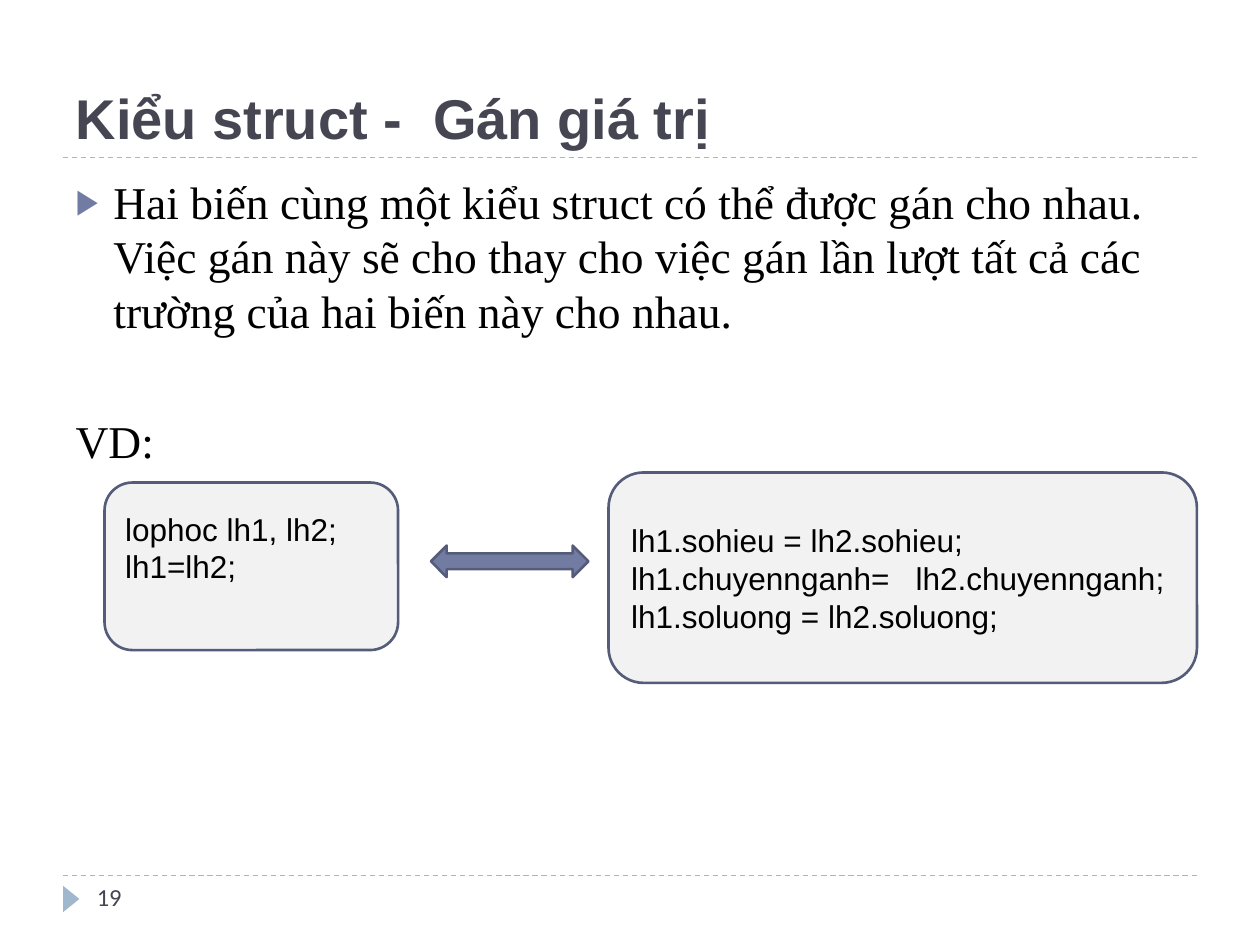
from lxml.etree import SubElement as Sub
from pptx import Presentation
from pptx.dml.color import RGBColor
from pptx.enum.dml import MSO_LINE as Dash
from pptx.enum.shapes import MSO_CONNECTOR as Link, MSO_SHAPE as Kind
from pptx.enum.text import MSO_ANCHOR as Anchor, MSO_AUTO_SIZE as Fit, PP_ALIGN as Align
from pptx.oxml.ns import qn
from pptx.util import Inches, Pt

DARK, BLUE, EDGE, PALE, SKY = "464653", "727CA3", "545C79", "F2F2F2", "9FB8CD"


def paint(color, tone):
    color.rgb = RGBColor.from_string(tone)


def place(shape, *box):
    shape.left, shape.top, shape.width, shape.height = map(Inches, box)


def write(shape, *lines, font="Arial", size=18, tone="000000", bold=False,
          anchor=Anchor.TOP, gaps=(), foot=0.05):
    frame = shape.text_frame
    frame.word_wrap = True
    frame.auto_size = Fit.NONE
    frame.vertical_anchor = anchor
    frame.margin_bottom = Inches(foot)
    frame.text = "\n".join(lines)
    for para in frame.paragraphs:
        para.alignment = Align.LEFT
        face = para.runs[0].font
        face.name, face.size, face.bold = font, Pt(size), bold
        paint(face.color, tone)
    for para, gap in zip(frame.paragraphs, gaps):
        para.space_before = Pt(gap)


def indent(para, left, mark=None):
    props = para._p.get_or_add_pPr()
    props.set("marL", str(Inches(left)))
    props.set("indent", str(-Inches(left)))
    if mark:
        tone = Sub(props, qn("a:buClr"))
        Sub(tone, qn("a:srgbClr"), val=BLUE)
        Sub(props, qn("a:buSzPct"), val="76000")
        Sub(props, qn("a:buFont"), typeface="Arial")
        Sub(props, qn("a:buChar"), char=mark)
    else:
        Sub(props, qn("a:buNone"))


def rule(slide, y):
    line = slide.shapes.add_connector(
        Link.STRAIGHT, Inches(0.5), Inches(y), Inches(9.5), Inches(y))
    paint(line.line.color, SKY)
    line.line.width = Pt(0.75)
    line.line.dash_style = Dash.DASH
    Sub(line._element.spPr, qn("a:effectLst"))


def draw(slide, kind, box, fill, edge=None):
    shape = slide.shapes.add_shape(kind, *map(Inches, box))
    shape.shadow.inherit = False
    shape.fill.solid()
    paint(shape.fill.fore_color, fill)
    if edge:
        paint(shape.line.color, edge)
        shape.line.width = Pt(1.5)
    else:
        shape.line.fill.background()
    return shape


def code(slide, box, *lines, **form):
    shape = draw(slide, Kind.ROUNDED_RECTANGLE, box, PALE, EDGE)
    write(shape, *lines, anchor=Anchor.MIDDLE, **form)


def main():
    deck = Presentation()
    deck.slide_width, deck.slide_height = Inches(10), Inches(7.5)
    slide = deck.slides.add_slide(deck.slide_layouts[1])

    rule(slide, 6.95)
    rule(slide, 1.25)
    mark = draw(slide, Kind.ISOSCELES_TRIANGLE, (0.46, 7.07, 0.21, 0.13), SKY)
    mark.rotation = 90

    title, body = slide.placeholders
    place(title, 0.5, 0.17, 9, 1.08)
    write(title, "Kiểu struct -  Gán giá trị", size=32, tone=DARK, bold=True,
          anchor=Anchor.BOTTOM)

    number = slide.shapes.add_textbox(*map(Inches, (0.67, 6.95, 2.17, 0.4)))
    write(number, "19", font="Calibri", size=14, tone=DARK)

    place(body, 0.5, 1.33, 9, 5.4)
    write(body,
          "Hai biến cùng một kiểu struct có thể được gán cho nhau. "
          "Việc gán này sẽ cho thay cho việc gán lần lượt tất cả các "
          "trường của hai biến này cho nhau.",
          "VD:", font="Times New Roman", size=26, gaps=(6, 43))
    first, last = body.text_frame.paragraphs
    indent(first, 0.3, "▶")
    indent(last, 0.3)

    code(slide, (4.83, 3.75, 4.67, 1.67),
         "lh1.sohieu = lh2.sohieu;",
         "lh1.chuyennganh=   lh2.chuyennganh;",
         "lh1.soluong = lh2.soluong;")
    draw(slide, Kind.LEFT_RIGHT_ARROW, (3.42, 4.33, 1.25, 0.25), BLUE, EDGE)
    code(slide, (0.83, 3.83, 2.33, 1.33), "lophoc lh1, lh2;", "lh1=lh2;", foot=0.35)

    deck.save("out.pptx")


if __name__ == "__main__":
    main()
